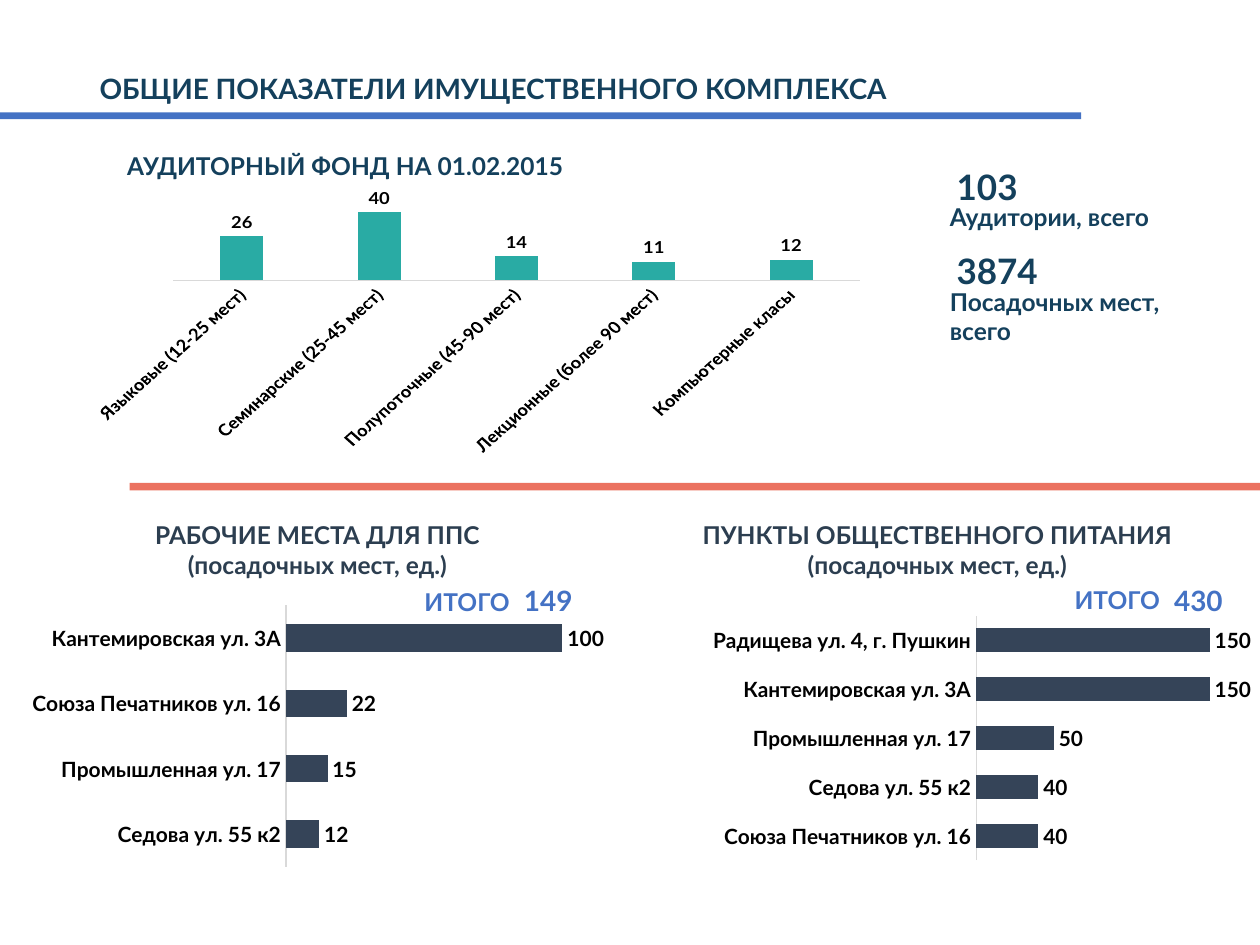
from pptx import Presentation
from pptx.chart.data import CategoryChartData
from pptx.dml.color import RGBColor
from pptx.enum.chart import XL_CHART_TYPE as Kind, XL_LABEL_POSITION as Pos, XL_TICK_MARK as Tick
from pptx.enum.shapes import MSO_SHAPE as Form
from pptx.enum.text import MSO_ANCHOR as Anchor, MSO_AUTO_SIZE as Fit, PP_ALIGN as Align
from pptx.oxml import parse_xml
from pptx.oxml.ns import nsdecls
from pptx.util import Inches, Pt

FONT = "Lato"
HEX = {"navy": "14405C", "slate": "2C3E50", "blue": "4472C4", "coral": "EB7260",
       "teal": "29ABA4", "bar": "354458", "axis": "D9D9D9", "black": "000000"}

TITLE = "ОБЩИЕ ПОКАЗАТЕЛИ ИМУЩЕСТВЕННОГО КОМПЛЕКСА"
ROOMS = "АУДИТОРНЫЙ ФОНД НА 01.02.2015"
TYPES = [("Языковые (12-25 мест)", 26), ("Семинарские (25-45 мест)", 40),
         ("Полупоточные (45-90 мест)", 14), ("Лекционные (более 90 мест)", 11),
         ("Компьютерные класы", 12)]
FACTS = [
    {"num": "103", "x": 69.7, "y": 16.9, "note": ["Аудитории, всего"], "top": 20.7, "high": 4.5},
    {"num": "3874", "x": 70.5, "y": 25.7, "note": ["Посадочных мест,", "всего"], "top": 29.7, "high": 7.6},
]
UNIT = "(посадочных мест, ед.)"
PANELS = [
    {"head": "ПУНКТЫ ОБЩЕСТВЕННОГО ПИТАНИЯ", "x": 53.3, "sum": "430", "sumx": 92.2, "sumy": 61.2,
     "at": (44.6, 63.7, 54.7, 28.8), "gap": 103, "plot": (0.605, 0.051, 0.364, 0.898),
     "rows": [("Союза Печатников ул. 16", 40), ("Седова ул. 55 к2", 40),
              ("Промышленная ул. 17", 50), ("Кантемировская ул. 3А", 150),
              ("Радищева ул. 4, г. Пушкин", 150)]},
    {"head": "РАБОЧИЕ МЕСТА ДЛЯ ППС", "x": 4.1, "sum": "149", "sumx": 40.6, "sumy": 61.5,
     "at": (1.6, 63.5, 48.4, 28.8), "gap": 140, "plot": None,
     "rows": [("Седова ул. 55 к2", 12), ("Промышленная ул. 17", 15),
              ("Союза Печатников ул. 16", 22), ("Кантемировская ул. 3А", 100)]},
]

deck = Presentation()
deck.slide_width, deck.slide_height = Inches(10), Inches(7.5)
slide = deck.slides.add_slide(deck.slide_layouts[5])


def area(x, y, w, h):
    wide, high = deck.slide_width / 100, deck.slide_height / 100
    return [int(x * wide), int(y * high), int(w * wide), int(h * high)]


def style(font, size, color):
    font.name, font.size, font.bold = FONT, Pt(size), True
    font.color.rgb = RGBColor.from_string(HEX[color])


def write(lines, at, size=14, color="navy", align=Align.LEFT, anchor=Anchor.TOP, shape=None):
    box = shape or slide.shapes.add_textbox(*area(*at))
    box.left, box.top, box.width, box.height = area(*at)
    frame = box.text_frame
    frame.word_wrap, frame.vertical_anchor = True, anchor
    frame.auto_size = Fit.NONE if shape else Fit.SHAPE_TO_FIT_TEXT
    for i, line in enumerate(lines):
        para = frame.add_paragraph() if i else frame.paragraphs[0]
        para.alignment = align
        run = para.add_run()
        run.text = line
        style(run.font, size, color)


def band(at, color):
    bar = slide.shapes.add_shape(Form.RECTANGLE, *area(*at))
    bar.shadow.inherit = False
    bar.fill.solid()
    bar.fill.fore_color.rgb = RGBColor.from_string(HEX[color])
    bar.line.fill.background()


def graph(rows, at, kind, color, size, gap, lap=None, plot=None, turn=None):
    data = CategoryChartData()
    data.categories = [name for name, _ in rows]
    data.add_series("Series 1", [val for _, val in rows])
    chart = slide.shapes.add_chart(kind, *area(*at), data).chart
    chart.has_legend = chart.has_title = False
    style(chart.font, size, "black")
    chart.value_axis.visible = False
    chart.value_axis.has_major_gridlines = False
    chart.value_axis.minimum_scale = 0
    axis = chart.category_axis
    axis.major_tick_mark = axis.minor_tick_mark = Tick.NONE
    style(axis.tick_labels.font, size, "black")
    axis.format.line.color.rgb = RGBColor.from_string(HEX["axis"])
    axis.format.line.width = Pt(0.75)
    if turn:
        axis._element.txPr.bodyPr.set("rot", str(turn * 60000))
    bars = chart.plots[0]
    bars.vary_by_categories, bars.gap_width = False, gap
    if lap:
        bars.overlap = lap
    fill = bars.series[0].format.fill
    fill.solid()
    fill.fore_color.rgb = RGBColor.from_string(HEX[color])
    bars.has_data_labels = True
    tags = bars.data_labels
    tags.show_value, tags.position = True, Pos.OUTSIDE_END
    style(tags.font, size, "black")
    if plot:
        root = chart._chartSpace.chart.plotArea
        for old in root.findall("{*}layout"):
            root.remove(old)
        spots = "".join(f'<c:{tag} val="{val}"/>' for tag, val in zip("xywh", plot))
        modes = '<c:layoutTarget val="inner"/><c:xMode val="edge"/><c:yMode val="edge"/>'
        root.insert(0, parse_xml(f'<c:layout {nsdecls("c")}><c:manualLayout>'
                                 f'{modes}{spots}</c:manualLayout></c:layout>'))


band((0, 11.9, 85.8, 0.7), "blue")
write([TITLE], (6.9, 6.9, 78.9, 4.9), size=16, anchor=Anchor.MIDDLE, shape=slide.shapes.title)
for fact in FACTS:
    write([fact["num"]], (fact["x"], fact["y"], 17.3, 5.9), size=20, align=Align.CENTER)
    write(fact["note"], (74.4, fact["top"], 25.2, fact["high"]))
write([ROOMS], (9.1, 15.3, 62.9, 4.5))
graph(TYPES, (6.2, 19.9, 63.3, 28.3), Kind.COLUMN_CLUSTERED, "teal", 10.5, 219, lap=-27, turn=-45)
band((10.3, 51.1, 89.7, 0.8), "coral")
for panel in PANELS:
    write([panel["head"], UNIT], (panel["x"], 54.4, 42.2, 7.6), color="slate", align=Align.CENTER)
    graph(panel["rows"], panel["at"], Kind.BAR_CLUSTERED, "bar", 12, panel["gap"], plot=panel["plot"])
    write([panel["sum"]], (panel["sumx"], 61.1, 7.4, 4.9), size=16, color="blue")
    write(["ИТОГО"], (panel["sumx"] - 7.9, panel["sumy"], 9, 4.5), color="blue")

deck.save("out.pptx")
